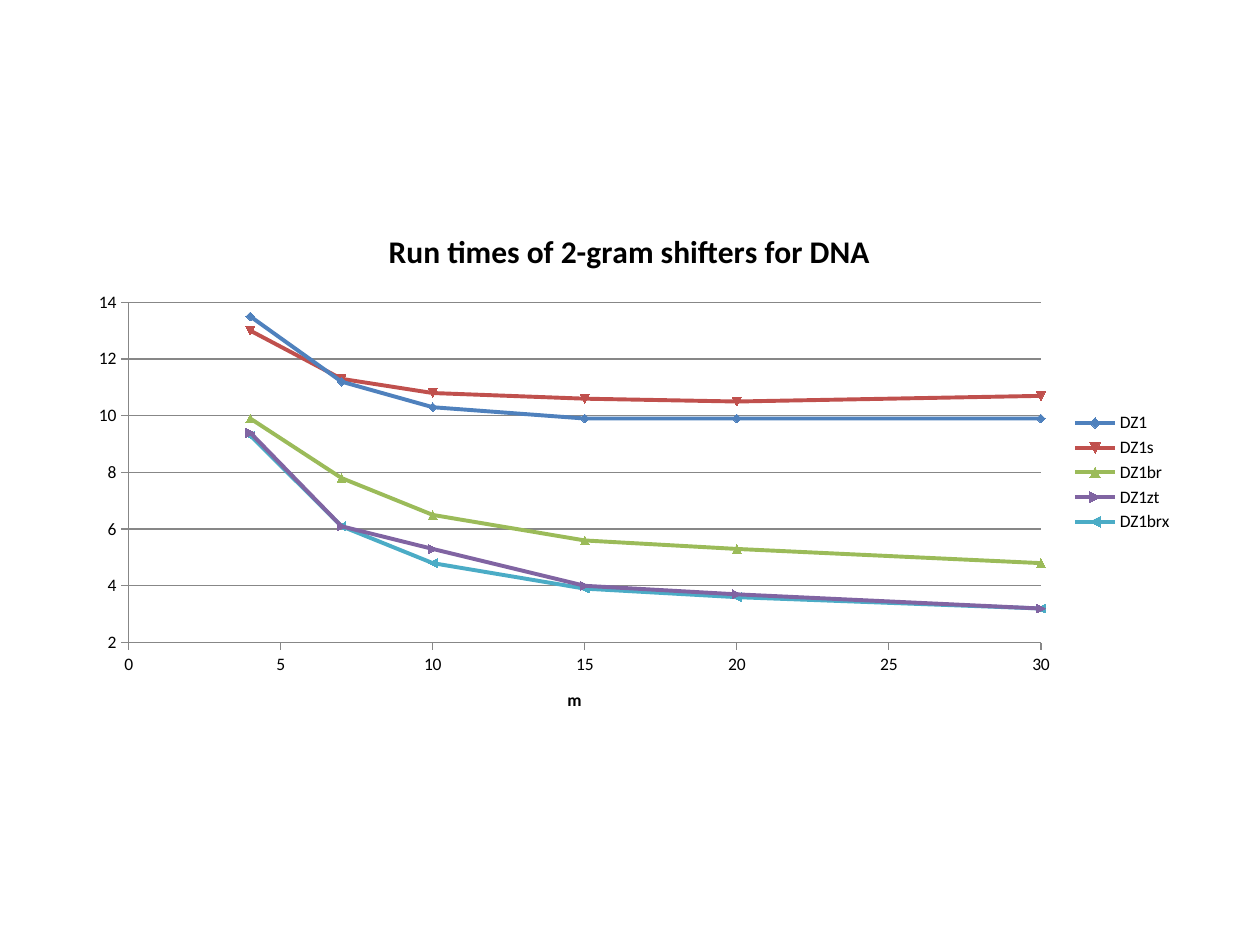
from lxml import etree
from pptx import Presentation
from pptx.chart.data import XyChartData
from pptx.dml.color import RGBColor
from pptx.enum import chart as ch
from pptx.oxml import ns
from pptx.util import Inches, Pt

PATTERN_LENGTHS = [4, 7, 10, 15, 20, 30]
SHIFTERS = [
    ("DZ1", "4F81BD", [13.5, 11.2, 10.3, 9.9, 9.9, 9.9]),
    ("DZ1s", "C0504D", [13, 11.3, 10.8, 10.6, 10.5, 10.7]),
    ("DZ1br", "9BBB59", [9.9, 7.8, 6.5, 5.6, 5.3, 4.8]),
    ("DZ1zt", "8064A2", [9.4, 6.1, 5.3, 4, 3.7, 3.2]),
    ("DZ1brx", "4BACC6", [9.3, 6.1, 4.8, 3.9, 3.6, 3.2]),
]


def color(hex_value):
    """Return the colour for a hex string."""
    return RGBColor.from_string(hex_value)


def style_line(line, hex_value, width):
    """Give a line its colour and its width in points."""
    line.color.rgb = color(hex_value)
    line.width = Pt(width)


def set_title(owner, wording, size):
    """Write a bold title on a chart or an axis."""
    owner.has_title = True
    title = owner.chart_title if hasattr(owner, "chart_title") else owner.axis_title
    title.text_frame.text = wording
    font = title.text_frame.paragraphs[0].runs[0].font
    font.name, font.size, font.bold = "Calibri", Pt(size), True
    font.color.rgb = color("000000")


def style_axis(axis, low, high, step, grid):
    """Set the scale, ticks and lines of an axis."""
    axis.minimum_scale, axis.maximum_scale, axis.major_unit = low, high, step
    axis.major_tick_mark = ch.XL_TICK_MARK.OUTSIDE
    axis.minor_tick_mark = ch.XL_TICK_MARK.NONE
    axis.tick_labels.number_format = "General"
    axis.tick_labels.number_format_is_linked = False
    style_line(axis.format.line, "878787", 0.75)
    axis.has_major_gridlines = grid
    if grid:
        style_line(axis.major_gridlines.format.line, "878787", 0.75)


def place_plot(chart, x, y, w, h):
    """Fix the inner plot area as fractions of the chart."""
    plot_area = chart.plots[0]._element.getparent()
    for old in plot_area.findall(ns.qn("c:layout")):
        plot_area.remove(old)
    layout = etree.Element(ns.qn("c:layout"))
    manual = etree.SubElement(layout, ns.qn("c:manualLayout"))
    settings = {"layoutTarget": "inner", "xMode": "edge", "yMode": "edge",
                "x": x, "y": y, "w": w, "h": h}
    for tag, value in settings.items():
        etree.SubElement(manual, ns.qn(f"c:{tag}")).set("val", str(value))
    plot_area.insert(0, layout)


def add_run_times(slide, left, top, width, height):
    """Draw the run time chart in the given box."""
    run_times = XyChartData()
    for name, _, times in SHIFTERS:
        shifter = run_times.add_series(name)
        for length, time in zip(PATTERN_LENGTHS, times):
            shifter.add_data_point(length, time)
    chart = slide.shapes.add_chart(
        ch.XL_CHART_TYPE.XY_SCATTER_SMOOTH, left, top, width, height, run_times).chart
    chart.font.name, chart.font.size = "Calibri", Pt(10)
    chart.font.color.rgb = color("000000")
    set_title(chart, "Run times of 2-gram shifters for DNA", 18)
    chart.chart_title.include_in_layout = False
    set_title(chart.category_axis, "m", 10)
    style_axis(chart.category_axis, 0, 30, 5, False)
    style_axis(chart.value_axis, 2, 14, 2, True)
    chart.has_legend = True
    chart.legend.position = ch.XL_LEGEND_POSITION.RIGHT
    chart.legend.include_in_layout = False
    chart.plots[0].vary_by_categories = False
    for shifter, (_, hex_value, _) in zip(chart.plots[0].series, SHIFTERS):
        style_line(shifter.format.line, hex_value, 2.25)
    place_plot(chart, 0.05, 0.18, 0.82, 0.64)


def main():
    """Build the slide and save it."""
    deck = Presentation()
    deck.slide_width, deck.slide_height = Inches(10), Inches(7.5)
    slide = deck.slides.add_slide(deck.slide_layouts[6])
    add_run_times(slide, Inches(0.58), Inches(1.64), Inches(8.83), Inches(4.22))
    deck.save("out.pptx")


if __name__ == "__main__":
    main()
